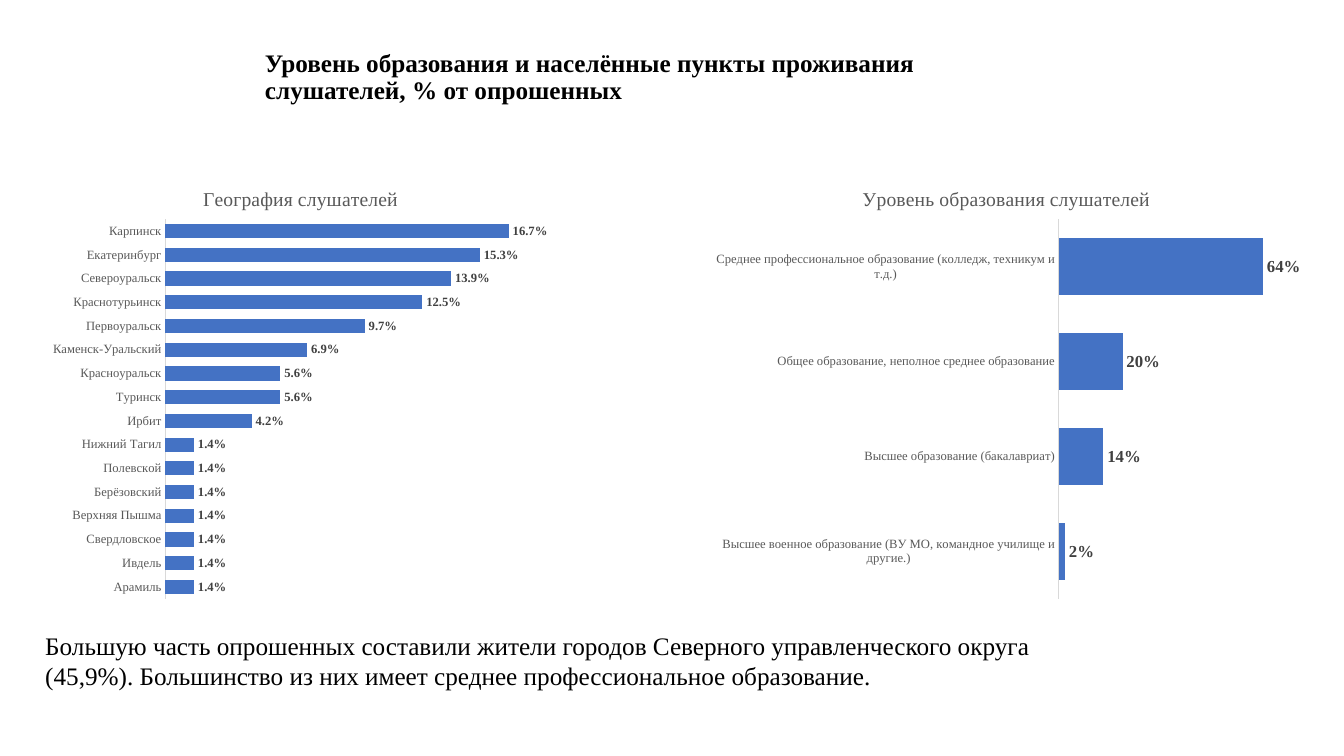
from lxml import etree
from pptx import Presentation
from pptx.chart.data import CategoryChartData
from pptx.dml.color import RGBColor
from pptx.enum.chart import XL_CHART_TYPE as ChartType, XL_LABEL_POSITION as LabelPosition
from pptx.enum.chart import XL_TICK_MARK as TickMark
from pptx.enum.text import MSO_ANCHOR as Anchor
from pptx.oxml.ns import qn
from pptx.util import Inches, Pt

SERIF = "Times New Roman"


def set_font(font, color, **values):
    font.color.rgb = RGBColor.from_string(color)
    for name, value in values.items():
        setattr(font, name, value)


def set_layout(element, **values):
    """Place a chart title or plot area by fractions of the chart."""
    for old in element.findall(qn("c:layout")):
        element.remove(old)
    layout = etree.Element(qn("c:layout"))
    manual = etree.SubElement(layout, qn("c:manualLayout"))
    for name, value in values.items():
        etree.SubElement(manual, qn(f"c:{name}")).set("val", str(value))
    text = element.find(qn("c:tx"))
    element.insert(0 if text is None else 1, layout)


presentation = Presentation()
presentation.slide_width = Inches(13.33)
presentation.slide_height = Inches(7.5)
slide = presentation.slides.add_slide(presentation.slide_layouts[6])

texts = [
    ("Уровень образования и населённые пункты проживания слушателей, % от опрошенных",
     (2.53, 0.4, 7.77, 0.75), True, Anchor.MIDDLE, {"line_spacing": 0.9, "space_after": Pt(6)}),
    ("Большую часть опрошенных составили жители городов Северного управленческого округа "
     "(45,9%). Большинство из них имеет среднее профессиональное образование.",
     (0.35, 6.2, 10.69, 0.71), False, Anchor.TOP, {}),
]
for text, box, bold, anchor, paragraph_format in texts:
    frame = slide.shapes.add_textbox(*map(Inches, box)).text_frame
    frame.word_wrap = True
    frame.vertical_anchor = anchor
    paragraph = frame.paragraphs[0]
    for name, value in paragraph_format.items():
        setattr(paragraph, name, value)
    run = paragraph.add_run()
    run.text = text
    set_font(run.font, "000000", name=SERIF, size=Pt(18), bold=bold)

towns = {
    "Арамиль": 0.014, "Ивдель": 0.014, "Свердловское": 0.014, "Верхняя Пышма": 0.014,
    "Берёзовский": 0.014, "Полевской": 0.014, "Нижний Тагил": 0.014, "Ирбит": 0.042,
    "Туринск": 0.056, "Красноуральск": 0.056, "Каменск-Уральский": 0.069,
    "Первоуральск": 0.097, "Краснотурьинск": 0.125, "Североуральск": 0.139,
    "Екатеринбург": 0.153, "Карпинск": 0.167,
}
education = {
    "Высшее военное образование (ВУ МО, командное училище и другие.)": 0.02,
    "Высшее образование (бакалавриат)": 0.14,
    "Общее образование, неполное среднее образование": 0.2,
    "Среднее профессиональное образование (колледж, техникум и т.д.)": 0.64,
}
# title, shares, left, width, number format, label size, axis maximum, title x, plot x, plot width
charts = [
    ("География слушателей", towns, 0.43, 5, "0.0%", 9, 0.18, 0.31, 0.242, 0.735),
    ("Уровень образования слушателей", education, 7.02, 5.88, "0%", 12, 0.7, 0.255, 0.592, 0.377),
]
for (title, shares, left, width, number_format, label_size, maximum,
     title_x, plot_x, plot_width) in charts:
    data = CategoryChartData(number_format=number_format)
    data.categories = list(shares)
    data.add_series("Series 1", list(shares.values()))
    chart = slide.shapes.add_chart(
        ChartType.BAR_CLUSTERED, Inches(left), Inches(1.62), Inches(width), Inches(4.41), data
    ).chart
    set_font(chart.font, "000000", name="Calibri", size=Pt(10))
    chart.has_legend = False

    chart.has_title = True
    paragraph = chart.chart_title.text_frame.paragraphs[0]
    run = paragraph.add_run()
    run.text = title
    set_font(run.font, "595959", name=SERIF, size=Pt(14), bold=False)
    chart.chart_title.include_in_layout = False
    set_layout(chart.chart_title._element, xMode="edge", yMode="edge", x=title_x, y=0.045)

    category_axis = chart.category_axis
    category_axis.major_tick_mark = TickMark.NONE
    category_axis.minor_tick_mark = TickMark.NONE
    set_font(category_axis.tick_labels.font, "595959", name=SERIF, size=Pt(9))
    category_axis.format.line.color.rgb = RGBColor.from_string("D9D9D9")
    category_axis.format.line.width = Pt(0.75)

    value_axis = chart.value_axis
    value_axis.visible = False
    value_axis.has_major_gridlines = False
    value_axis.minimum_scale = 0
    value_axis.maximum_scale = maximum

    plot = chart.plots[0]
    plot.gap_width = 68
    plot.vary_by_categories = False
    fill = plot.series[0].format.fill
    fill.solid()
    fill.fore_color.rgb = RGBColor.from_string("4472C4")
    plot.has_data_labels = True
    labels = plot.data_labels
    labels.show_value = True
    labels.number_format = number_format
    labels.number_format_is_linked = False
    labels.position = LabelPosition.OUTSIDE_END
    set_font(labels.font, "404040", name=SERIF, size=Pt(label_size), bold=True)
    set_layout(chart._chartSpace.chart.plotArea, layoutTarget="inner", xMode="edge",
               yMode="edge", x=plot_x, y=0.126, w=plot_width, h=0.854)

presentation.save("out.pptx")
